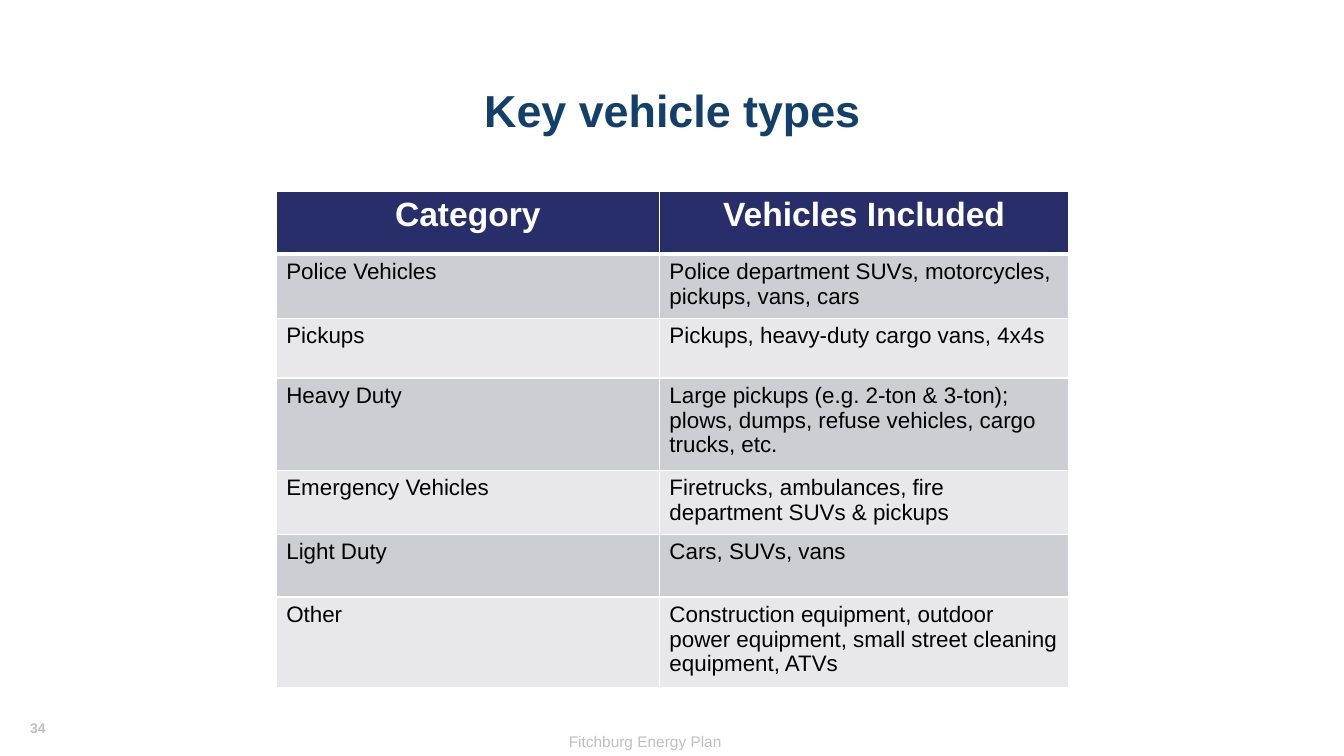
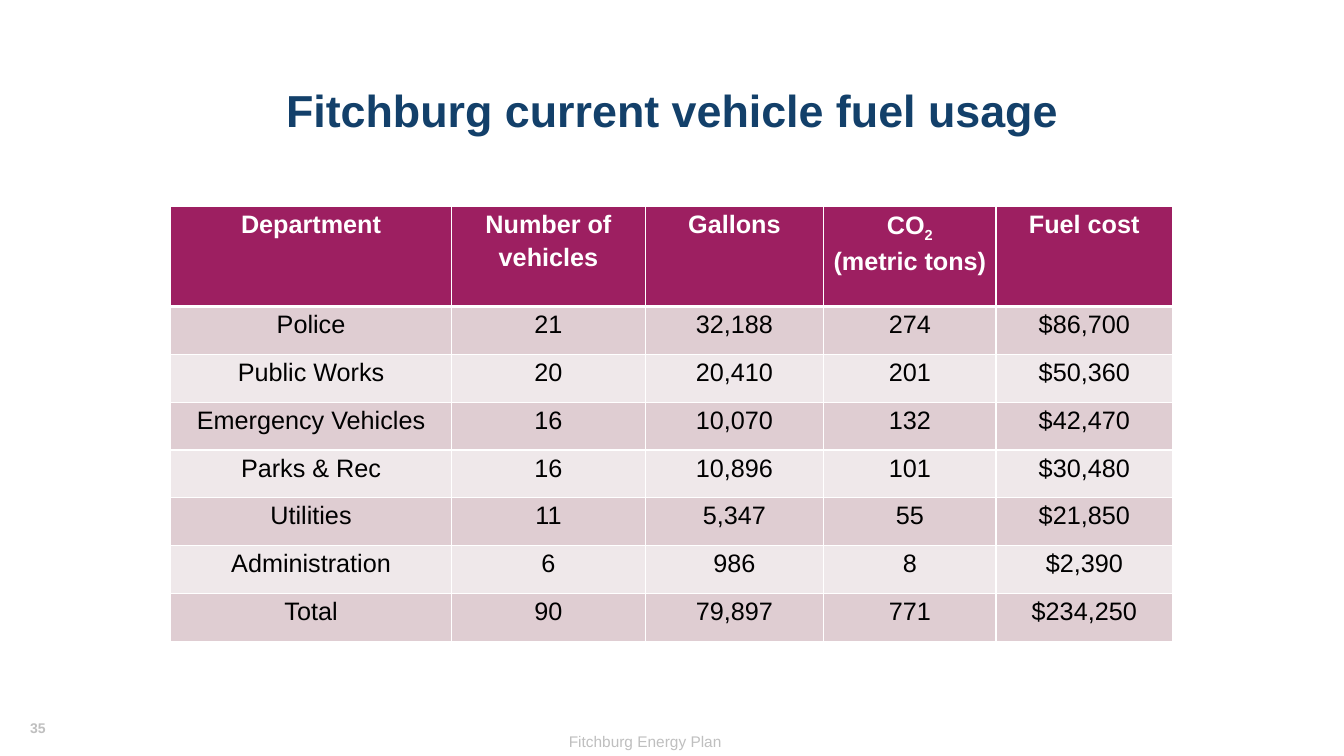
from dataclasses import dataclass

from lxml.etree import SubElement
from pptx import Presentation
from pptx.dml.color import RGBColor
from pptx.enum.text import MSO_ANCHOR, MSO_AUTO_SIZE, PP_ALIGN
from pptx.oxml.ns import qn
from pptx.util import Inches, Pt


@dataclass(frozen=True)
class Theme:
    font: str = "Arial"
    title: str = "13406A"
    footer: str = "BFBFBF"
    body: str = "000000"
    white: str = "FFFFFF"
    title_size: int = 32
    footer_size: int = 11
    number_size: int = 10
    rule: int = 1
    header_rule: int = 3


THEME = Theme()
FOOTER = "Fitchburg Energy Plan"
FIRST_NUMBER = 34
TITLE_ONLY = 5

# Text between underscores is set as a subscript.
SLIDES = [
    dict(
        title="Key vehicle types",
        at=(2.74, 1.9),
        cols=[3.8, 4.06],
        row_heights=[0.62, 0.64, 0.59, 0.92, 0.63, 0.62, 0.84],
        header_fill="272E69",
        bands=("CDCDD4", "E8E8EB"),
        margins=(0.1, 0.05),
        header_format=dict(size=24, align=PP_ALIGN.CENTER),
        body_format=dict(size=16, align=PP_ALIGN.LEFT),
        rows=[
            ("Category", "Vehicles Included"),
            ("Police Vehicles",
             "Police department SUVs, motorcycles, pickups, vans, cars"),
            ("Pickups", "Pickups, heavy-duty cargo vans, 4x4s"),
            ("Heavy Duty",
             "Large pickups (e.g. 2-ton & 3-ton); plows, dumps, "
             "refuse vehicles, cargo trucks, etc."),
            ("Emergency Vehicles",
             "Firetrucks, ambulances, fire department SUVs & pickups"),
            ("Light Duty", "Cars, SUVs, vans"),
            ("Other",
             "Construction equipment, outdoor power equipment, "
             "small street cleaning equipment, ATVs"),
        ],
    ),
    dict(
        title="Fitchburg current vehicle fuel usage",
        at=(1.69, 2.05),
        cols=[2.79, 1.92, 1.77, 1.71, 1.75],
        row_heights=[0.99] + [0.475] * 7,
        header_fill="9D1F61",
        bands=("DFCDD2", "EFE8EA"),
        margins=(0.07, 0),
        header_format=dict(size=18, align=PP_ALIGN.CENTER, spacing=1.15),
        body_format=dict(size=18, align=PP_ALIGN.CENTER, spacing=1.15),
        rows=[
            ("Department", "Number of vehicles", "Gallons",
             "CO_2_\n(metric tons)", "Fuel cost"),
            ("Police", "21", "32,188", "274", "$86,700"),
            ("Public Works", "20", "20,410", "201", "$50,360"),
            ("Emergency Vehicles", "16", "10,070", "132", "$42,470"),
            ("Parks & Rec", "16", "10,896", "101", "$30,480"),
            ("Utilities", "11", "5,347", "55", "$21,850"),
            ("Administration", "6", "986", "8", "$2,390"),
            ("Total", "90", "79,897", "771", "$234,250"),
        ],
    ),
]


def write(tf, text, *, size, color, bold=False, align=PP_ALIGN.LEFT, spacing=None):
    """Fill a text frame: one paragraph a line, subscripts between underscores."""
    for i, line in enumerate(text.split("\n")):
        p = tf.add_paragraph() if i else tf.paragraphs[0]
        p.alignment = align
        if spacing:
            p.line_spacing = spacing
        for j, part in enumerate(line.split("_")):
            if not part:
                continue
            r = p.add_run()
            r.text = part
            r.font.name = THEME.font
            r.font.size = Pt(size)
            r.font.bold = bold
            r.font.color.rgb = RGBColor.from_string(color)
            if j % 2:
                r.font._element.set("baseline", "-25000")


def add_label(slide, text, box, *, wrap=True, **fmt):
    tf = slide.shapes.add_textbox(*map(Inches, box)).text_frame
    tf.word_wrap = wrap
    write(tf, text, color=THEME.footer, **fmt)


def add_base(prs, title, number):
    """Add a slide with the shared title, footer and number."""
    slide = prs.slides.add_slide(prs.slide_layouts[TITLE_ONLY])
    add_label(slide, FOOTER, (4.35, 7.21, 4.1, 0.29),
              size=THEME.footer_size, align=PP_ALIGN.CENTER)
    add_label(slide, str(number), (0.2, 7.09, 0.37, 0.27), wrap=False,
              size=THEME.number_size, bold=True)
    sp = slide.shapes.title
    sp.left, sp.top, sp.width, sp.height = map(Inches, (0.92, 0.4, 11.5, 1.45))
    tf = sp.text_frame
    tf.vertical_anchor = MSO_ANCHOR.MIDDLE
    tf.auto_size = MSO_AUTO_SIZE.NONE
    write(tf, title, size=THEME.title_size, color=THEME.title, bold=True,
          align=PP_ALIGN.CENTER, spacing=0.9)
    return slide


def set_borders(cell, top, bottom):
    """Draw white cell rules; top and bottom are widths in points."""
    props = cell._tc.get_or_add_tcPr()
    widths = dict(lnL=THEME.rule, lnR=THEME.rule, lnT=top, lnB=bottom)
    for tag, width in widths.items():
        line = SubElement(props, qn(f"a:{tag}"), w=str(Pt(width)))
        fill = SubElement(line, qn("a:solidFill"))
        SubElement(fill, qn("a:srgbClr"), val=THEME.white)


def add_grid(slide, data):
    rows, cols, heights = data["rows"], data["cols"], data["row_heights"]
    size = (sum(cols), sum(heights))
    table = slide.shapes.add_table(
        len(rows), len(cols), *map(Inches, data["at"] + size)).table
    for column, width in zip(table.columns, cols):
        column.width = Inches(width)
    for row, height in zip(table.rows, heights):
        row.height = Inches(height)
    side, edge = map(Inches, data["margins"])
    for i, texts in enumerate(rows):
        header = i == 0
        fill = data["header_fill"] if header else data["bands"][(i - 1) % 2]
        fmt = data["header_format" if header else "body_format"]
        for j, text in enumerate(texts):
            cell = table.cell(i, j)
            cell.margin_left = cell.margin_right = side
            cell.margin_top = cell.margin_bottom = edge
            set_borders(cell,
                        top=THEME.header_rule if i == 1 else THEME.rule,
                        bottom=THEME.header_rule if header else THEME.rule)
            cell.fill.solid()
            cell.fill.fore_color.rgb = RGBColor.from_string(fill)
            write(cell.text_frame, text, bold=header,
                  color=THEME.white if header else THEME.body, **fmt)


def main():
    prs = Presentation()
    prs.slide_width, prs.slide_height = Inches(13.33), Inches(7.5)
    for number, data in enumerate(SLIDES, FIRST_NUMBER):
        add_grid(add_base(prs, data["title"], number), data)
    prs.save("out.pptx")


if __name__ == "__main__":
    main()
